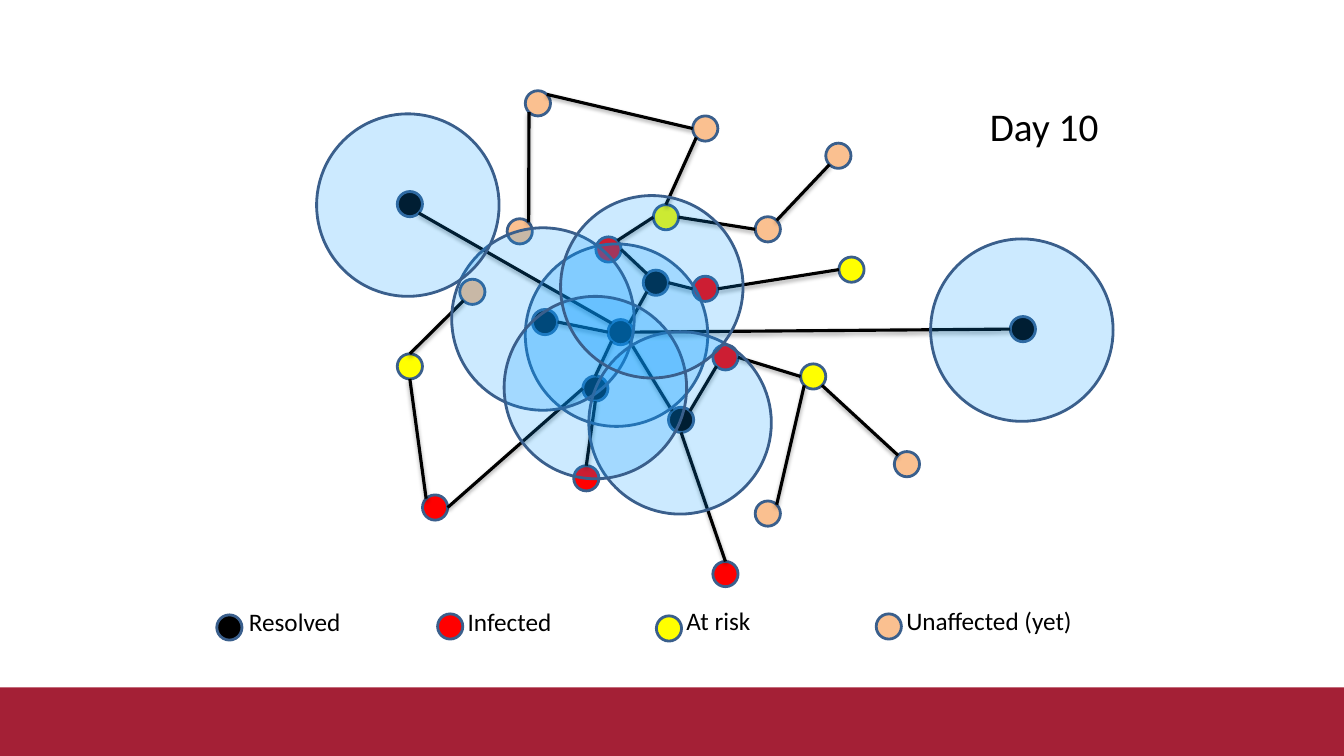
from dataclasses import dataclass
from math import cos, radians, sin

from lxml.etree import SubElement
from pptx import Presentation
from pptx.dml.color import RGBColor
from pptx.enum.shapes import MSO_CONNECTOR as CONN, MSO_SHAPE as SHAPE
from pptx.oxml.ns import qn
from pptx.util import Emu, Pt

PX = 9144  # EMU per px, 100 px to the inch
NODE_SIZE = 25
ZONE_SIZE = 181
COLORS = {
    "resolved": "000000",
    "infected": "FF0000",
    "at risk": "FFFF00",
    "unaffected": "FAC090",
    "outline": "3A5F8C",
    "zone": "0099FF",
    "ink": "000000",
    "band": "A42036",
}
# Angle of each joining point on a node, clockwise from the right
SITES = {"E": 0, "SE": 45, "S": 90, "SW": 135, "W": 180, "NW": 225, "N": 270, "NE": 315}


@dataclass
class Node:
    status: str
    x: int
    y: int


@dataclass
class Link:
    start: str
    start_site: str
    end: str
    end_site: str


@dataclass
class Label:
    text: str
    x: int
    y: int
    w: int
    h: int
    size: int


NODES = {
    "core": Node("resolved", 603, 317),
    "north": Node("resolved", 638, 268),
    "west": Node("resolved", 528, 307),
    "south": Node("resolved", 578, 373),
    "southeast": Node("resolved", 663, 404),
    "far east": Node("resolved", 1002, 314),
    "far northwest": Node("resolved", 394, 190),
    "red northwest": Node("infected", 591, 235),
    "red northeast": Node("infected", 687, 274),
    "red east": Node("infected", 707, 342),
    "red south": Node("infected", 569, 462),
    "red far south": Node("infected", 707, 557),
    "red southwest": Node("infected", 419, 491),
    "yellow north": Node("at risk", 648, 203),
    "yellow northeast": Node("at risk", 832, 255),
    "yellow east": Node("at risk", 794, 361),
    "yellow west": Node("at risk", 394, 351),
    "peach top": Node("unaffected", 687, 115),
    "peach top left": Node("unaffected", 521, 90),
    "peach northwest": Node("unaffected", 503, 217),
    "peach west": Node("unaffected", 456, 277),
    "peach northeast": Node("unaffected", 749, 215),
    "peach far northeast": Node("unaffected", 819, 142),
    "peach southeast": Node("unaffected", 887, 448),
    "peach south": Node("unaffected", 749, 497),
}
LINKS = [
    Link("core", "NE", "north", "SW"),
    Link("core", "SE", "southeast", "NW"),
    Link("west", "E", "core", "W"),
    Link("south", "N", "core", "SW"),
    Link("north", "NW", "red northwest", "E"),
    Link("north", "E", "red northeast", "W"),
    Link("yellow east", "W", "red east", "E"),
    Link("southeast", "NE", "red east", "SW"),
    Link("red northwest", "NE", "yellow north", "W"),
    Link("yellow north", "E", "peach northeast", "W"),
    Link("yellow northeast", "W", "red northeast", "E"),
    Link("peach top", "SW", "yellow north", "N"),
    Link("peach far northeast", "SW", "peach northeast", "NE"),
    Link("peach southeast", "NW", "yellow east", "SE"),
    Link("peach south", "NE", "yellow east", "SW"),
    Link("red south", "N", "south", "S"),
    Link("red far south", "N", "southeast", "S"),
    Link("far east", "W", "core", "E"),
    Link("red southwest", "E", "south", "W"),
    Link("yellow west", "S", "red southwest", "NW"),
    Link("far northwest", "SE", "core", "NW"),
    Link("peach top left", "SW", "peach northwest", "NE"),
    Link("peach top left", "NE", "peach top", "W"),
    Link("peach west", "SW", "yellow west", "N"),
]
LEGEND = [
    (Node("resolved", 215, 610), Label("Resolved", 237, 597, 145, 50, 18)),
    (Node("infected", 434, 609), Label("Infected", 454, 597, 132, 50, 18)),
    (Node("at risk", 651, 611), Label("At risk", 671, 596, 105, 50, 18)),
    (Node("unaffected", 869, 609), Label("Unaffected (yet)", 889, 596, 242, 50, 18)),
]
DAY = Label("Day 10", 972, 97, 129, 57, 28)
ZONES = [(521, 242), (448, 226), (584, 329), (500, 294), (556, 194), (314, 113), (923, 237)]


def px(n: float) -> Emu:
    return Emu(round(n * PX))


def rgb(name: str) -> RGBColor:
    return RGBColor.from_string(COLORS[name])


def add_shape(slide, kind, x: int, y: int, w: int, h: int, fill: str):
    s = slide.shapes.add_shape(kind, px(x), px(y), px(w), px(h))
    s.shadow.inherit = False
    s.fill.solid()
    s.fill.fore_color.rgb = rgb(fill)
    return s


def add_circle(slide, x: int, y: int, size: int, fill: str):
    s = add_shape(slide, SHAPE.OVAL, x, y, size, size, fill)
    s.line.color.rgb = rgb("outline")
    s.line.width = Pt(2)
    return s


def add_node(slide, node: Node) -> None:
    add_circle(slide, node.x, node.y, NODE_SIZE, node.status)


def add_zone(slide, x: int, y: int) -> None:
    s = add_circle(slide, x, y, ZONE_SIZE, "zone")
    clr = s.fill._xPr.find(qn("a:solidFill"))[0]
    SubElement(clr, qn("a:alpha"), val="20000")


def site_point(name: str, site: str) -> tuple[Emu, Emu]:
    node, angle, radius = NODES[name], radians(SITES[site]), NODE_SIZE / 2
    return px(node.x + radius + radius * cos(angle)), px(node.y + radius + radius * sin(angle))


def add_link(slide, link: Link) -> None:
    start = site_point(link.start, link.start_site)
    end = site_point(link.end, link.end_site)
    c = slide.shapes.add_connector(CONN.STRAIGHT, *start, *end)
    c.line.color.rgb = rgb("ink")
    c.line.width = Pt(2.25)
    # Soft shadow straight below the line
    effects = SubElement(c._element.spPr, qn("a:effectLst"))
    shadow = SubElement(effects, qn("a:outerShdw"), blurRad=str(Pt(3.1)), dist=str(Pt(1.8)),
                        dir="5400000", rotWithShape="0")
    clr = SubElement(shadow, qn("a:srgbClr"), val=COLORS["ink"])
    SubElement(clr, qn("a:alpha"), val="35000")


def add_label(slide, label: Label) -> None:
    s = slide.shapes.add_textbox(px(label.x), px(label.y), px(label.w), px(label.h))
    tf = s.text_frame
    tf.word_wrap = True
    tf.margin_right = 0
    r = tf.paragraphs[0].add_run()
    r.text = label.text
    r.font.name = "Calibri"
    r.font.size = Pt(label.size)
    r.font.color.rgb = rgb("ink")


def main() -> None:
    prs = Presentation()
    prs.slide_width, prs.slide_height = px(1333), px(750)
    slide = prs.slides.add_slide(prs.slide_layouts[6])

    # Footer band
    band = add_shape(slide, SHAPE.RECTANGLE, 0, 682, 1333, 68, "band")
    band.line.fill.background()

    # Contact network
    for node in NODES.values():
        add_node(slide, node)
    add_label(slide, DAY)
    for link in LINKS:
        add_link(slide, link)

    # Legend
    for node, label in LEGEND:
        add_node(slide, node)
        add_label(slide, label)

    # Zones around resolved cases
    for x, y in ZONES:
        add_zone(slide, x, y)

    prs.save("out.pptx")


if __name__ == "__main__":
    main()
